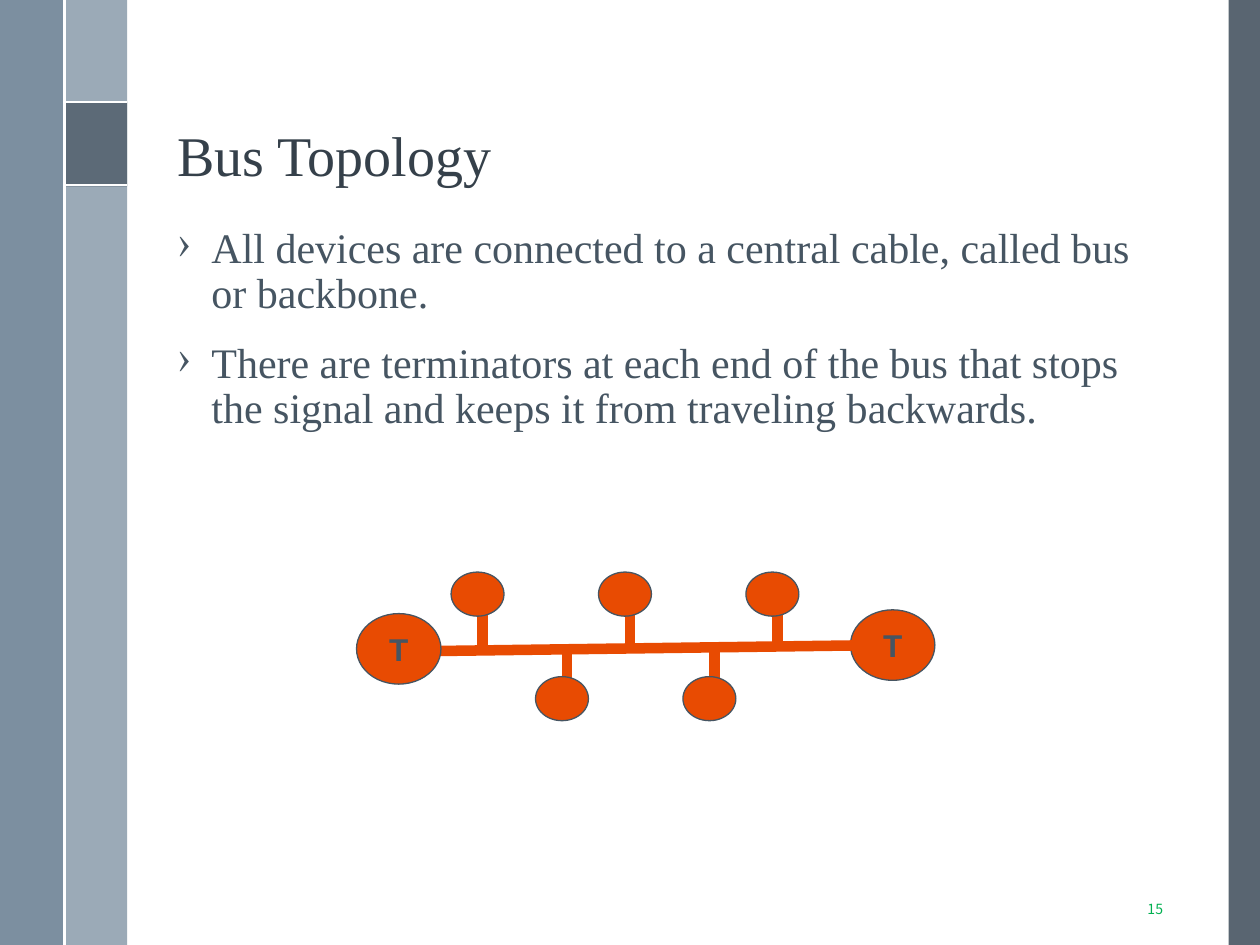
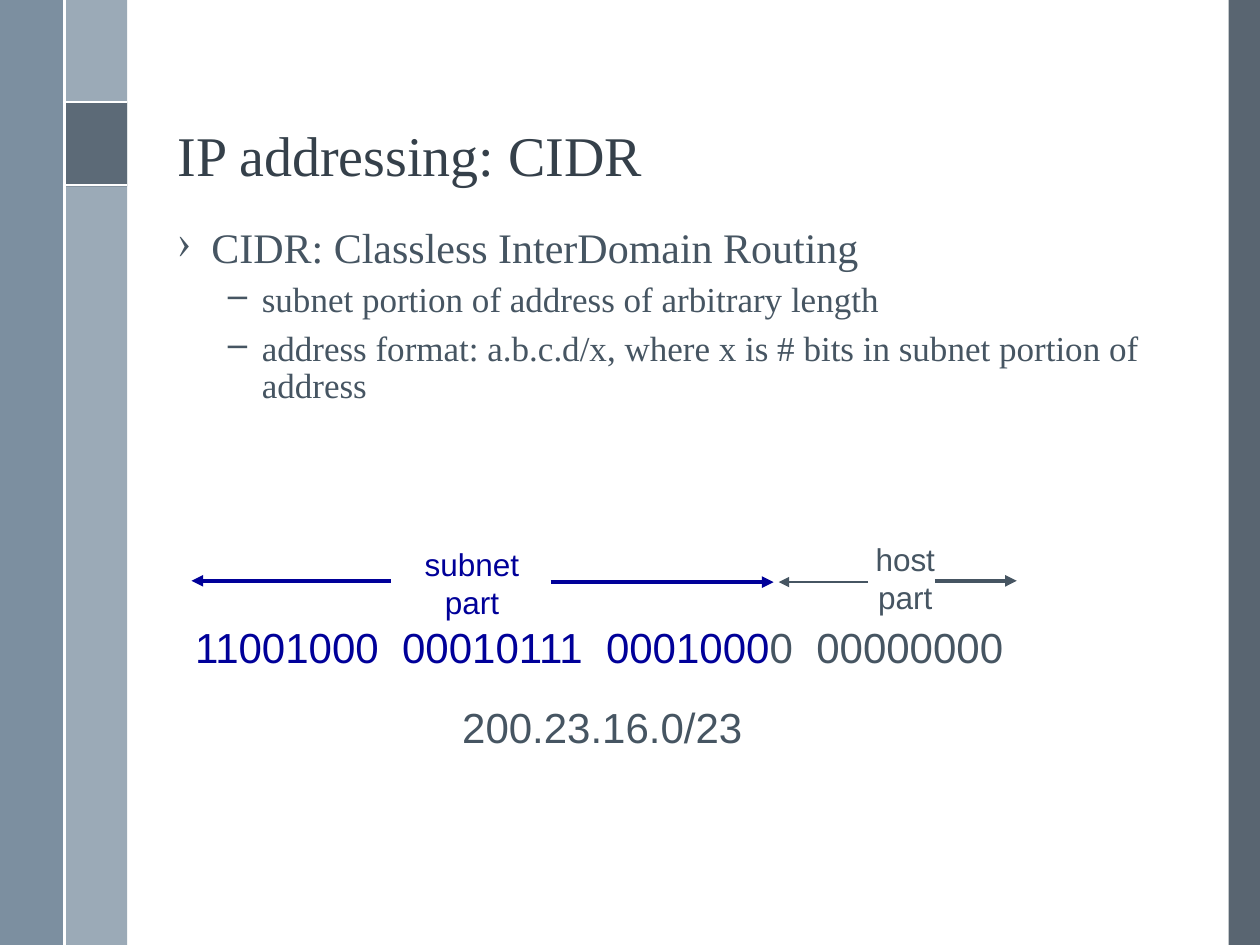
from dataclasses import dataclass

from lxml.etree import SubElement
from pptx import Presentation
from pptx.dml.color import RGBColor
from pptx.enum.shapes import MSO_CONNECTOR, MSO_SHAPE
from pptx.enum.text import MSO_ANCHOR, MSO_AUTO_SIZE, PP_ALIGN
from pptx.oxml.ns import qn
from pptx.util import Inches, Pt


@dataclass(frozen=True)
class Theme:
    # Colours
    title: str = "35404A"
    ink: str = "465562"
    slate: str = "475562"
    steel: str = "6A8093"
    mist: str = "9BAAB7"
    white: str = "FFFFFF"
    orange: str = "E84B02"
    navy: str = "000099"
    green: str = "00B050"
    # Fonts and sizes
    serif: str = "Times New Roman"
    sans: str = "Arial"
    small: str = "Noto Sans CJK TC"
    head_size: int = 32
    body_size: int = 24
    sub_size: int = 20
    label_size: int = 18
    page_size: int = 8


THEME = Theme()
TITLE_BOX = (1.31, 0.19, 8.03, 1.36)
BODY_BOX = (1.31, 1.75, 8.03, 5.25)
PAGE_BOX = (8.83, 7.08, 0.5, 0.27)
BUS_BOX = (2.83, 4.54, 4.59, 1.18)
CIDR_BOX = (1.45, 4.24, 6.7, 1.78)


# Basic parts
def style(run, font, size, color, bold=False):
    run.font.name = font
    run.font.size = Pt(size)
    run.font.bold = bold
    run.font.color.rgb = RGBColor.from_string(color)


def add_form(slide, kind, box, fill, line=None, alpha=100):
    form = slide.shapes.add_shape(kind, *map(Inches, box))
    form.shadow.inherit = False
    form.fill.solid()
    form.fill.fore_color.rgb = RGBColor.from_string(fill)
    if alpha < 100:
        tint = form.fill._xPr.find(".//" + qn("a:srgbClr"))
        SubElement(tint, qn("a:alpha")).set("val", str(alpha * 1000))
    if line:
        form.line.color.rgb = RGBColor.from_string(line)
        form.line.width = Pt(0.75)
    else:
        form.line.fill.background()
    return form


def add_line(slide, start, end, color, width, arrow=False):
    line = slide.shapes.add_connector(
        MSO_CONNECTOR.STRAIGHT, *map(Inches, (*start, *end)))
    line.line.color.rgb = RGBColor.from_string(color)
    line.line.width = Pt(width)
    if arrow:
        SubElement(line.line._get_or_add_ln(), qn("a:tailEnd")).set("type", "triangle")
    SubElement(line._element.spPr, qn("a:effectLst"))


def add_text(slide, box, text, font, size, color, align=PP_ALIGN.LEFT,
             anchor=MSO_ANCHOR.TOP, wrap=True):
    frame = slide.shapes.add_textbox(*map(Inches, box)).text_frame
    frame.word_wrap = wrap
    frame.auto_size = MSO_AUTO_SIZE.NONE if wrap else MSO_AUTO_SIZE.SHAPE_TO_FIT_TEXT
    frame.vertical_anchor = anchor
    frame.text = text
    for para in frame.paragraphs:
        para.alignment = align
        for run in para.runs:
            style(run, font, size, color)
    return frame


# Shared frame: side bands, rules and title
def add_frame(slide, title):
    bands = [
        ((9.75, 0, 0.25, 7.5), THEME.slate, 90),
        ((0.51, 0, 0.5, 7.5), THEME.mist, 100),
        ((0, 0, 0.5, 7.5), THEME.steel, 88),
        ((0.51, 0.81, 0.5, 0.67), THEME.slate, 75),
    ]
    for box, fill, alpha in bands:
        add_form(slide, MSO_SHAPE.RECTANGLE, box, fill, alpha=alpha)
    rules = [((0.51, y), (1.01, y)) for y in (0.81, 1.47)]
    for start, end in rules + [((0.51, 0), (0.51, 7.5))]:
        add_line(slide, start, end, THEME.white, 1.5)
    frame = add_text(slide, TITLE_BOX, title, THEME.serif, THEME.head_size,
                     THEME.title, anchor=MSO_ANCHOR.BOTTOM)
    frame.paragraphs[0].line_spacing = 0.9


# Bulleted body: items are (level, text)
def add_body(slide, items):
    looks = [("›", 0.27, 14, THEME.body_size), ("–", 0.67, 6, THEME.sub_size)]
    text = "\n".join(words for _, words in items)
    frame = add_text(slide, BODY_BOX, text, THEME.serif, THEME.body_size, THEME.ink)
    for para, (level, _) in zip(frame.paragraphs, items):
        mark, indent, space, size = looks[level]
        para.level = level
        para.line_spacing = 0.9
        para.space_before = Pt(space)
        para.runs[0].font.size = Pt(size)
        props = para._p.get_or_add_pPr()
        props.set("marL", str(Inches(indent)))
        props.set("indent", str(-Inches(0.27)))
        SubElement(props, qn("a:buChar")).set("char", mark)


def add_page(slide, number):
    add_text(slide, PAGE_BOX, number, THEME.small, THEME.page_size, THEME.green,
             PP_ALIGN.RIGHT, MSO_ANCHOR.MIDDLE)


# Bus with terminators and hanging nodes
def add_stop(slide, left, top):
    stop = add_form(slide, MSO_SHAPE.OVAL, (left, top, 0.67, 0.56),
                    THEME.orange, THEME.ink)
    frame = stop.text_frame
    frame.word_wrap = False
    frame.vertical_anchor = MSO_ANCHOR.MIDDLE
    frame.text = "T"
    para = frame.paragraphs[0]
    para.alignment = PP_ALIGN.CENTER
    style(para.runs[0], THEME.sans, THEME.label_size, THEME.ink, bold=True)


def add_bus(slide, box):
    left, top, width, _ = box
    step = 1.17
    above = [(left + 0.75 + step * i, top) for i in range(3)]
    below = [(left + 1.42 + step * i, top + 0.83) for i in range(2)]
    add_stop(slide, left + width - 0.67, top + 0.3)
    add_line(slide, (left + 0.42, top + 0.63), (left + 4.17, top + 0.58),
             THEME.orange, 6)
    drops = [(x, y + 0.32) for x, y in above] + [(x, y - 0.25) for x, y in below]
    for x, y in drops:
        add_line(slide, (x + 0.25, y), (x + 0.25, y + 0.28), THEME.orange, 6)
    add_stop(slide, left, top + 0.33)
    for x, y in above + below:
        add_form(slide, MSO_SHAPE.OVAL, (x, y, 0.42, 0.35), THEME.orange, THEME.ink)


# Address bits with their subnet and host spans
def add_cidr(slide, box):
    left, top, width, _ = box
    bits = add_text(slide, (left, top + 0.64, width, 0.5),
                    "11001000  00010111  0001000", THEME.sans, THEME.body_size,
                    THEME.navy, wrap=False)
    host = bits.paragraphs[0].add_run()
    host.text = "0  00000000"
    style(host, THEME.sans, THEME.body_size, THEME.ink)

    labels = [("subnet\npart", 1.82, 0.04, 0.95, THEME.navy),
              ("host\npart", 5.4, 0, 0.67, THEME.ink)]
    for text, x, y, span, color in labels:
        add_text(slide, (left + x, top + y, span, 0.7), text, THEME.sans,
                 THEME.label_size, color, PP_ALIGN.CENTER, wrap=False)

    arrows = [(1.65, 0.07, 0.37, THEME.navy, 2.25),
              (2.92, 4.69, 0.38, THEME.navy, 2.25),
              (5.44, 4.73, 0.38, THEME.ink, 1.5),
              (5.97, 6.62, 0.37, THEME.ink, 2.25)]
    for start, end, y, color, weight in arrows:
        add_line(slide, (left + start, top + y), (left + end, top + y),
                 color, weight, arrow=True)

    add_text(slide, (left + 2.12, top + 1.28, 2.43, 0.5), "200.23.16.0/23",
             THEME.sans, THEME.body_size, THEME.ink, wrap=False)


# Slides
def make_bus(slide):
    add_frame(slide, "Bus Topology")
    add_page(slide, "15")
    add_body(slide, [
        (0, "All devices are connected to a central cable, called bus or backbone."),
        (0, "There are terminators at each end of the bus that stops the signal "
            "and keeps it from traveling backwards."),
    ])
    add_bus(slide, BUS_BOX)


def make_cidr(slide):
    add_frame(slide, "IP addressing: CIDR")
    add_body(slide, [
        (0, "CIDR: Classless InterDomain Routing"),
        (1, "subnet portion of address of arbitrary length"),
        (1, "address format: a.b.c.d/x, where x is # bits in subnet portion of address"),
    ])
    add_cidr(slide, CIDR_BOX)


def main():
    deck = Presentation()
    deck.slide_width, deck.slide_height = Inches(10), Inches(7.5)
    for make in (make_bus, make_cidr):
        make(deck.slides.add_slide(deck.slide_layouts[6]))
    deck.save("out.pptx")


if __name__ == "__main__":
    main()
